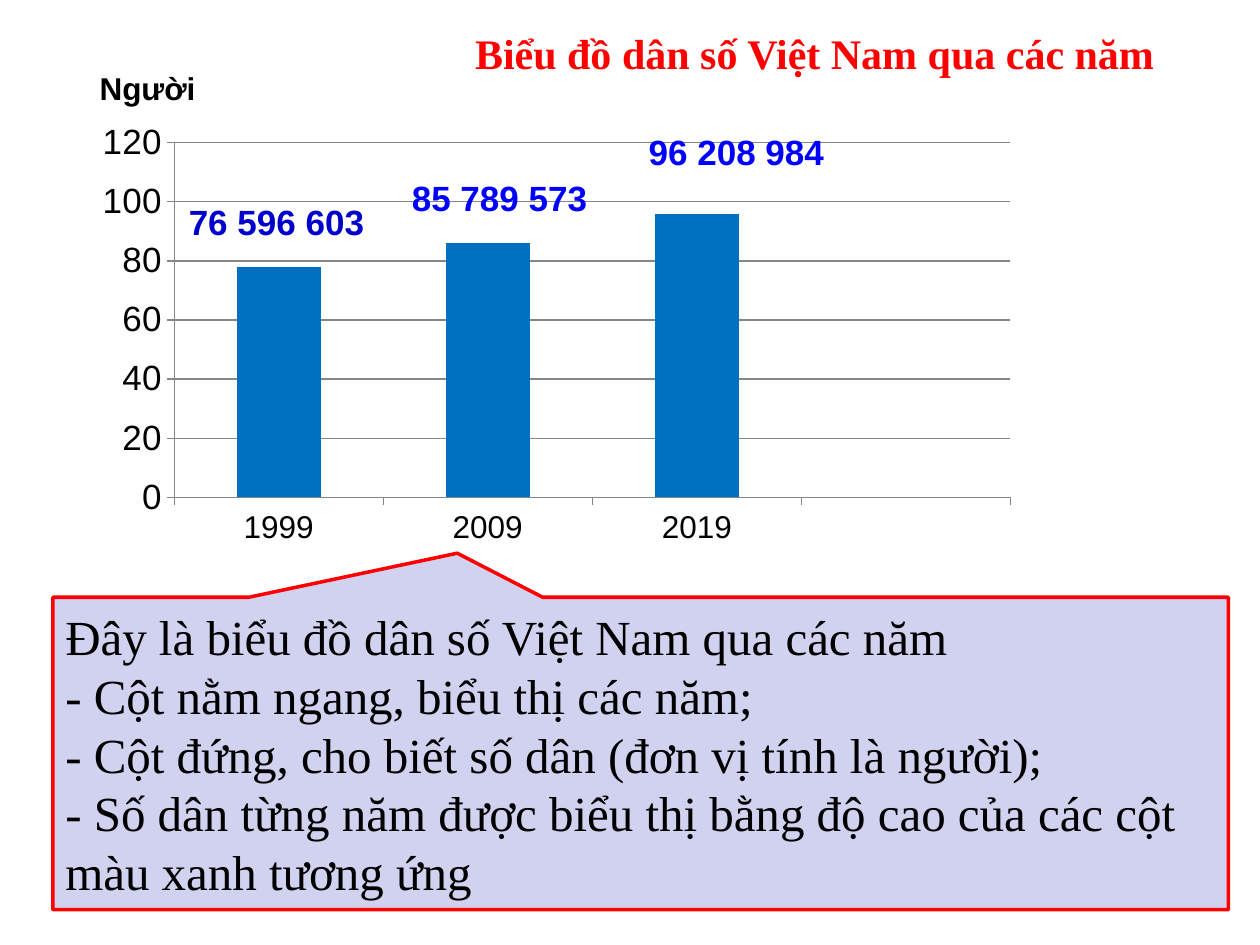
from lxml import etree
from pptx import Presentation
from pptx.chart.data import CategoryChartData as Data
from pptx.dml.color import RGBColor
from pptx.enum.chart import XL_CHART_TYPE as Kind, XL_TICK_MARK as Tick
from pptx.enum.shapes import MSO_SHAPE as Shape
from pptx.enum.text import MSO_ANCHOR as Anchor, PP_ALIGN as Align
from pptx.oxml.ns import qn
from pptx.util import Inches, Pt

RED = RGBColor(0xFF, 0, 0)
BLACK = RGBColor(0, 0, 0)
LILAC = RGBColor(0xD1, 0xD1, 0xF0)
BAR = RGBColor(0, 0x70, 0xC0)
NAVY = RGBColor(0, 0, 0xCC)
BLUE = RGBColor(0, 0, 0xFF)
GRAY = RGBColor(0x86, 0x86, 0x86)


def style(item, name, size, color, bold=False):
    font = item.font
    font.name, font.size, font.bold = name, Pt(size), bold
    font.color.rgb = color


def place(part, index, **values):
    """Give a chart part a manual layout, in fractions of the chart."""
    for old in part.findall(qn("c:layout")):
        part.remove(old)
    layout = etree.Element(qn("c:layout"))
    manual = etree.SubElement(layout, qn("c:manualLayout"))
    for key, value in values.items():
        etree.SubElement(manual, qn(f"c:{key}")).set("val", str(value))
    part.insert(index, layout)


prs = Presentation()
prs.slide_width, prs.slide_height = Inches(10), Inches(7.5)
slide = prs.slides.add_slide(prs.slide_layouts[5])
shapes = slide.shapes

# Callout that explains the chart
note = shapes.add_shape(Shape.RECTANGULAR_CALLOUT, Inches(0.42), Inches(4.74),
                        Inches(9.33), Inches(2.48))
note.adjustments[0], note.adjustments[1] = -0.156, -0.641
note.shadow.inherit = False
note.fill.solid()
note.fill.fore_color.rgb = LILAC
note.line.color.rgb = RED
note.line.width = Pt(2)
frame = note.text_frame
frame.word_wrap = True
frame.vertical_anchor = Anchor.MIDDLE
lines = [
    "Đây là biểu đồ dân số Việt Nam qua các năm",
    "- Cột nằm ngang, biểu thị các năm;",
    "- Cột đứng, cho biết số dân (đơn vị tính là người);",
    "- Số dân từng năm được biểu thị bằng độ cao của các cột màu xanh tương ứng",
]
frame.text = "\n".join(lines)
for para in frame.paragraphs:
    para.alignment = Align.LEFT
    style(para, "Times New Roman", 28, BLACK)

# Column chart, with an empty fourth place
data = Data()
data.categories = ["1999", "2009", "2019", ""]
data.add_series("Series 1", [78, 86, 96, None])
chart = shapes.add_chart(Kind.COLUMN_CLUSTERED, Inches(0.67), Inches(0.33),
                         Inches(7.5), Inches(4.08), data).chart
style(chart, "Arial", 10, BLACK)
chart.has_legend = False
plot = chart.plots[0]
plot.gap_width = 150
plot.vary_by_categories = False
fill = plot.series[0].format.fill
fill.solid()
fill.fore_color.rgb = BAR

# Axes
for axis, size in [(chart.category_axis, 18), (chart.value_axis, 20)]:
    style(axis.tick_labels, "Arial", size, BLACK)
    axis.major_tick_mark = Tick.OUTSIDE
    axis.minor_tick_mark = Tick.NONE
    axis.format.line.color.rgb = GRAY
scale = chart.value_axis
scale.minimum_scale, scale.maximum_scale, scale.major_unit = 0, 120, 20
scale.major_gridlines.format.line.color.rgb = GRAY

# Unit shown as chart title, and the plot area
chart.has_title = True
unit = chart.chart_title
unit.include_in_layout = False
unit.text_frame.text = "Người"
style(unit.text_frame.paragraphs[0], "Arial", 18, BLACK, True)
place(unit._element, 1, xMode="edge", yMode="edge", x=0.01, y=0.04)
area = chart._chartSpace.chart.plotArea
place(area, 0, layoutTarget="inner", xMode="edge", yMode="edge",
      x=0.095, y=0.197, w=0.885, h=0.69)

# Exact counts above the columns
counts = [
    ("76 596 603", 1.4, 1.54, NAVY),
    ("85 789 573", 3.17, 1.35, BLUE),
    ("96 208 984", 5.05, 0.99, BLUE),
]
for text, left, top, color in counts:
    box = shapes.add_textbox(Inches(left), Inches(top), Inches(1.63), Inches(0.44))
    frame = box.text_frame
    frame.word_wrap = True
    frame.text = text
    style(frame.paragraphs[0], "Arial", 20, color, True)

# Slide title, brought to the front
title = shapes.title
title.left, title.top = Inches(3.67), Inches(0.17)
title.width, title.height = Inches(5.65), Inches(0.5)
frame = title.text_frame
frame.text = "Biểu đồ dân số Việt Nam qua các năm"
frame.word_wrap = False
frame.vertical_anchor = Anchor.TOP
para = frame.paragraphs[0]
para.alignment = Align.LEFT
style(para, "Times New Roman", 24, RED, True)
title.element.getparent().append(title.element)

prs.save("out.pptx")
